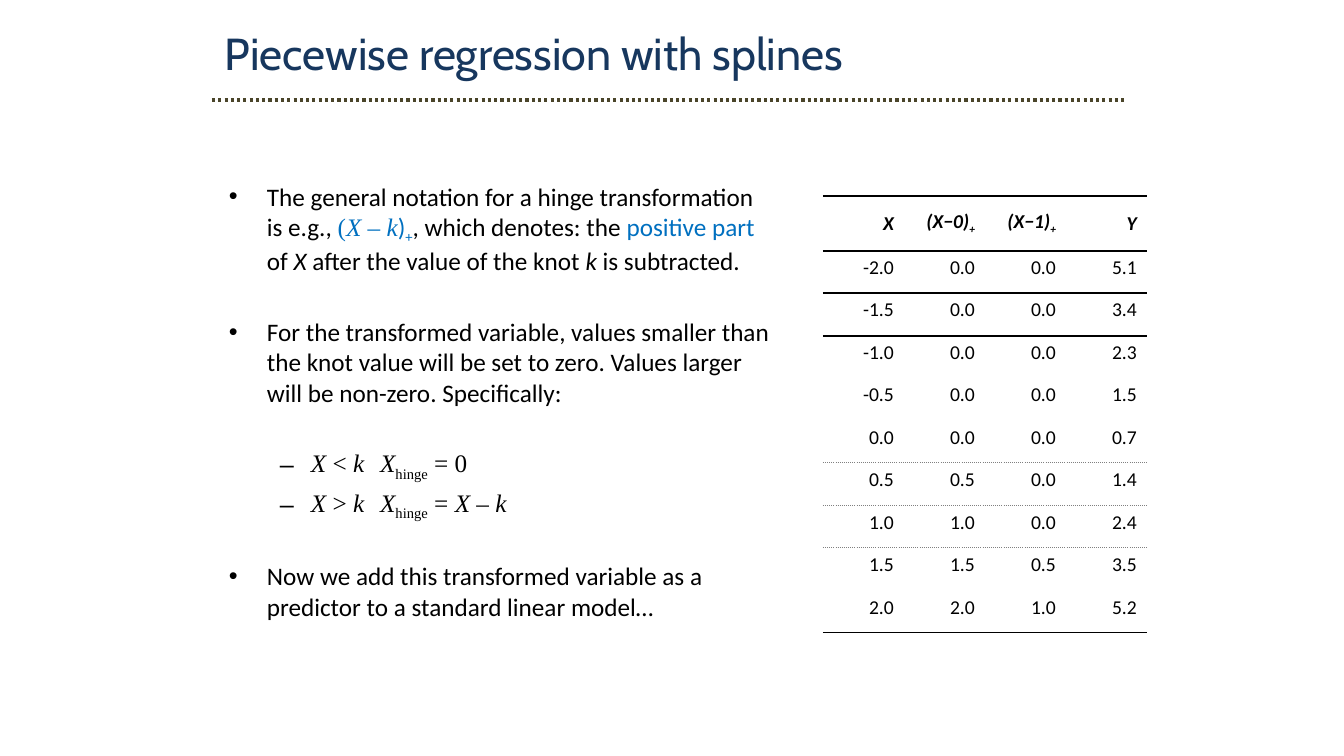
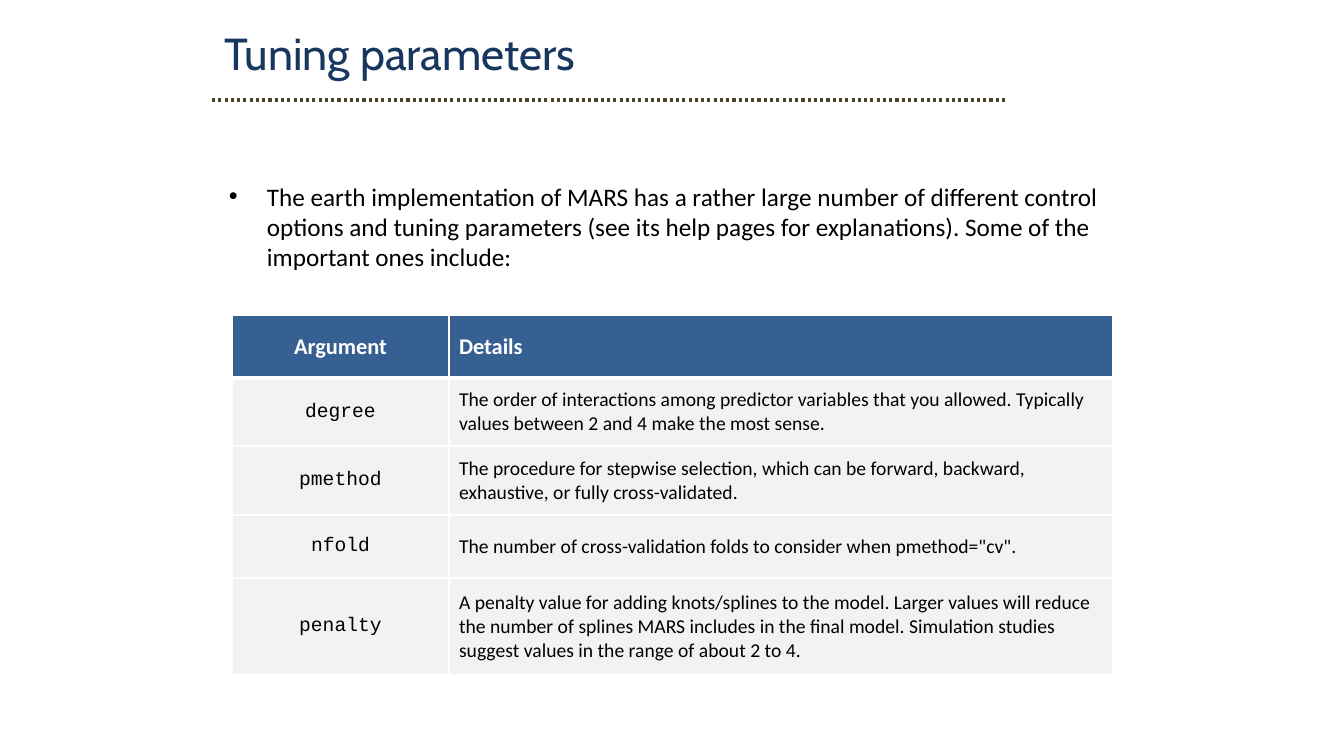
from lxml.etree import SubElement
from pptx import Presentation
from pptx.dml.color import RGBColor
from pptx.enum.dml import MSO_LINE_DASH_STYLE as Dash
from pptx.enum.shapes import MSO_CONNECTOR
from pptx.enum.text import MSO_ANCHOR as Anchor, PP_ALIGN as Align
from pptx.oxml.ns import qn
from pptx.util import Pt

PX = 914400 / 100.8
SLIDE_WIDTH, SLIDE_HEIGHT = 1344, 756
COLORS = {
    "title": "17375E", "rule": "4A452A", "text": "000000", "accent": "0070C0",
    "dots": "808080", "header": "376092", "row": "F2F2F2", "white": "FFFFFF",
}
RGB = {name: RGBColor.from_string(value) for name, value in COLORS.items()}
TITLE_FONT, BODY_FONT, MATH_FONT, CODE_FONT = "Cabin", "Calibri", "Times New Roman", "Courier New"
NO_STYLE_NO_GRID = "{2D5ABB26-0587-4C30-8999-92F81FD0307C}"


def add_runs(paragraph, parts):
    """Add (text, styles) runs; styles are any of: math, italic, accent, sub."""
    for text, styles in parts:
        if text == "\n":
            paragraph.add_line_break()
            continue
        run = paragraph.add_run()
        run.text = text
        if "math" in styles:
            run.font.name = MATH_FONT
        if "italic" in styles:
            run.font.italic = True
        if "accent" in styles:
            run.font.color.rgb = RGB["accent"]
        if "sub" in styles:
            run._r.get_or_add_rPr().set("baseline", "-25000")


def add_border(cell, side, color, points, dash="solid"):
    """Draw one cell edge; call in the order L, R, T, B and before the fill."""
    properties = cell._tc.get_or_add_tcPr()
    line = SubElement(properties, qn(f"a:ln{side}"), w=str(Pt(points)))
    fill = SubElement(line, qn("a:solidFill"))
    SubElement(fill, qn("a:srgbClr"), val=COLORS[color])
    SubElement(line, qn("a:prstDash"), val=dash)


# Body paragraphs: level, space before in points, font, runs
BULLETS = [("•", 38, 38), ("–", 82, 31)]  # symbol, left margin, hanging indent
BREAK = ("\n", "")
hinge_body = [
    (0, 0, BODY_FONT, [
        ("The general notation for a hinge transformation", ""), BREAK,
        ("is e.g., ", ""), ("(", "math accent"), ("X", "math italic accent"),
        (" – ", "math accent"), ("k", "math italic accent"), (")", "accent"),
        ("+", "accent sub"), (", which denotes: the ", ""), ("positive part", "accent"), BREAK,
        ("of ", ""), ("X ", "italic"), ("after the value of the knot ", ""),
        ("k ", "italic"), ("is subtracted.", "")]),
    (0, 29, BODY_FONT, [
        ("For the transformed variable, values smaller than", ""), BREAK,
        ("the knot value will be set to zero. Values larger", ""), BREAK,
        ("will be non-zero. Specifically:", "")]),
    (1, 29, MATH_FONT, [
        ("X", "italic"), (" < ", ""), ("k\tX", "italic"), ("hinge", "sub"), (" = 0", "")]),
    (1, 3.6, MATH_FONT, [
        ("X", "italic"), (" > ", ""), ("k\tX", "italic"), ("hinge", "sub"), (" = ", ""),
        ("X", "italic"), (" – ", ""), ("k", "italic")]),
    (0, 28, BODY_FONT, [
        ("Now we add this transformed variable as a", ""), BREAK,
        ("predictor to a standard linear model…", "")]),
]
tuning_body = [
    (0, 0, BODY_FONT, [
        ("The earth implementation of MARS has a rather large number of different control "
         "options and tuning parameters (see its help pages for explanations). Some of the "
         "important ones include:", "")]),
]

# Title, right end of the rule, body width, body, table left and top, columns, rows
pages = [
    ("Piecewise regression with splines", 1125, 580, hinge_body,
     (823, 196), [81] * 4, [55] + [42, 43] * 4 + [42]),
    ("Tuning parameters", 1005, 907, tuning_body,
     (232, 315), [217, 664], [63, 68, 69, 63, 97]),
]

presentation = Presentation()
presentation.slide_width = round(SLIDE_WIDTH * PX)
presentation.slide_height = round(SLIDE_HEIGHT * PX)
tables = []

for title, rule_right, body_width, body, corner, columns, rows in pages:
    slide = presentation.slides.add_slide(presentation.slide_layouts[6])

    body_box = slide.shapes.add_textbox(*(round(v * PX) for v in (219, 176, body_width, 543)))
    body_frame = body_box.text_frame
    body_frame.word_wrap = True
    for index, (level, space, font_name, parts) in enumerate(body):
        paragraph = body_frame.add_paragraph() if index else body_frame.paragraphs[0]
        symbol, margin, hanging = BULLETS[level]
        paragraph.level = level
        if space:
            paragraph.space_before = Pt(space)
        properties = paragraph._p.get_or_add_pPr()
        properties.set("marL", str(round(margin * PX)))
        properties.set("indent", str(round(-hanging * PX)))
        SubElement(properties, qn("a:buFont"), typeface="Arial")
        SubElement(properties, qn("a:buChar"), char=symbol)
        paragraph.font.name = font_name
        paragraph.font.size = Pt(18)
        paragraph.font.color.rgb = RGB["text"]
        add_runs(paragraph, parts)

    title_box = slide.shapes.add_textbox(*(round(v * PX) for v in (215, 21, 901, 64)))
    title_box.text_frame.word_wrap = True
    paragraph = title_box.text_frame.paragraphs[0]
    paragraph.text = title
    paragraph.font.name = TITLE_FONT
    paragraph.font.size = Pt(32)
    paragraph.font.color.rgb = RGB["title"]

    ends = (round(v * PX) for v in (212, 100, rule_right, 100))
    rule = slide.shapes.add_connector(MSO_CONNECTOR.STRAIGHT, *ends)
    rule.line.color.rgb = RGB["rule"]
    rule.line.width = Pt(2.25)
    rule.line.dash_style = Dash.ROUND_DOT
    SubElement(rule._element.spPr, qn("a:effectLst"))

    area = (round(v * PX) for v in (*corner, sum(columns), sum(rows)))
    table = slide.shapes.add_table(len(rows), len(columns), *area).table
    table.first_row = table.horz_banding = False
    table._tbl.tblPr.find(qn("a:tableStyleId")).text = NO_STYLE_NO_GRID
    for column, width in zip(table.columns, columns):
        column.width = round(width * PX)
    for row, height in zip(table.rows, rows):
        row.height = round(height * PX)
    tables.append(table)

hinge_table, tuning_table = tables

# Hinge table: rules are keyed by the row they stand above
hinge_header = [
    [("X", "")], [("(X−0)", ""), ("+", "sub")], [("(X−1)", ""), ("+", "sub")], [("Y", "")],
]
hinge_values = [
    ("-2.0", "0.0", "0.0", "5.1"),
    ("-1.5", "0.0", "0.0", "3.4"),
    ("-1.0", "0.0", "0.0", "2.3"),
    ("-0.5", "0.0", "0.0", "1.5"),
    ("0.0", "0.0", "0.0", "0.7"),
    ("0.5", "0.5", "0.0", "1.4"),
    ("1.0", "1.0", "0.0", "2.4"),
    ("1.5", "1.5", "0.5", "3.5"),
    ("2.0", "2.0", "1.0", "5.2"),
]
solid_rule, dotted_rule = ("text", 1), ("dots", 1, "sysDot")
hinge_rules = {edge: solid_rule for edge in (0, 1, 2, 10)} | {6: dotted_rule, 7: dotted_rule}
hinge_rows = [hinge_header] + [[[(value, "")] for value in row] for row in hinge_values]
for r, row in enumerate(hinge_rows):
    for c, parts in enumerate(row):
        cell = hinge_table.cell(r, c)
        for side, edge in (("T", r), ("B", r + 1)):
            if edge in hinge_rules:
                add_border(cell, side, *hinge_rules[edge])
        cell.fill.background()
        cell.vertical_anchor = Anchor.TOP if r else Anchor.MIDDLE
        paragraph = cell.text_frame.paragraphs[0]
        paragraph.alignment = Align.RIGHT
        paragraph.font.name = BODY_FONT
        paragraph.font.size = Pt(14)
        paragraph.font.bold = paragraph.font.italic = r == 0
        paragraph.font.color.rgb = RGB["text"]
        add_runs(paragraph, parts)

tuning_rows = [
    ("Argument", "Details"),
    ("degree", "The order of interactions among predictor variables that you allowed. "
               "Typically values between 2 and 4 make the most sense."),
    ("pmethod", "The procedure for stepwise selection, which can be forward, backward, "
                "exhaustive, or fully cross-validated."),
    ("nfold", 'The number of cross-validation folds to consider when pmethod="cv".'),
    ("penalty", "A penalty value for adding knots/splines to the model. Larger values will "
                "reduce the number of splines MARS includes in the final model. Simulation "
                "studies suggest values in the range of about 2 to 4."),
]
for r, row in enumerate(tuning_rows):
    is_header = r == 0
    for c, text in enumerate(row):
        cell = tuning_table.cell(r, c)
        for side, edge in (("L", None), ("R", None), ("T", r), ("B", r + 1)):
            add_border(cell, side, "white", 3 if edge == 1 else 1)
        cell.fill.solid()
        cell.fill.fore_color.rgb = RGB["header" if is_header else "row"]
        cell.vertical_anchor = Anchor.MIDDLE
        paragraph = cell.text_frame.paragraphs[0]
        paragraph.text = text
        paragraph.alignment = Align.LEFT if c else Align.CENTER
        paragraph.font.name = BODY_FONT if is_header or c else CODE_FONT
        paragraph.font.size = Pt(16 if is_header else 14)
        paragraph.font.bold = is_header
        paragraph.font.color.rgb = RGB["white" if is_header else "text"]

presentation.save("out.pptx")
